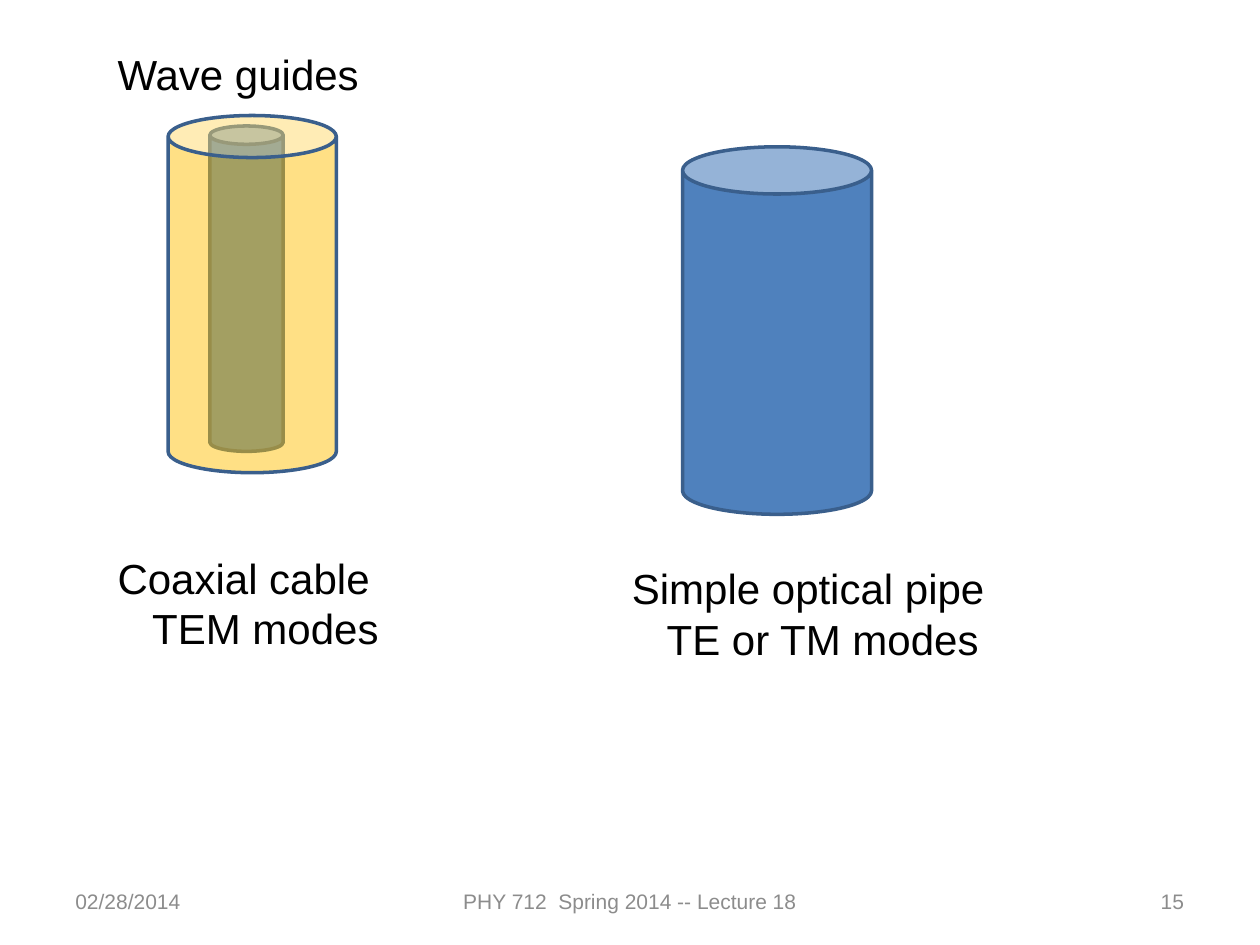
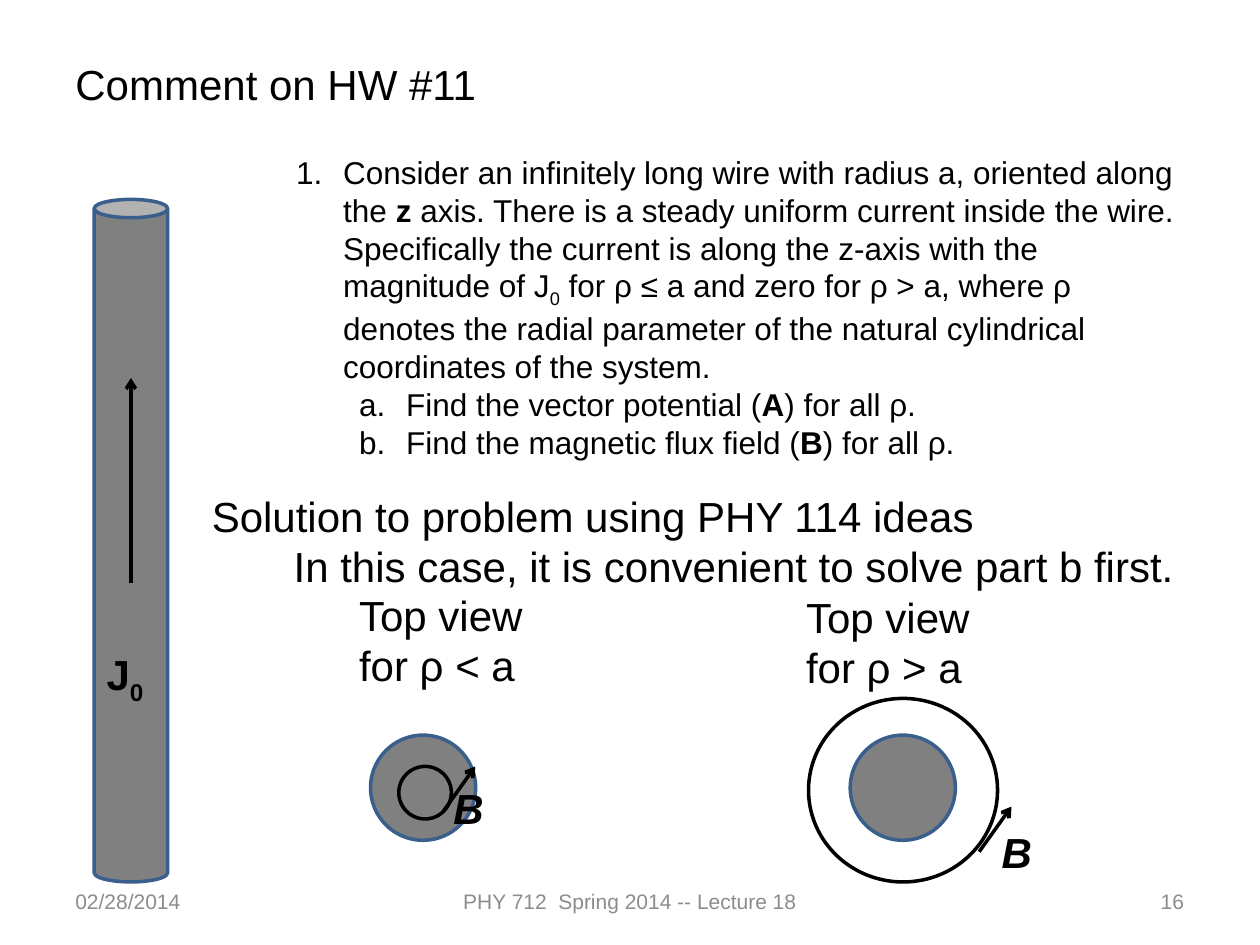
from dataclasses import dataclass

from lxml.etree import SubElement
from pptx import Presentation
from pptx.dml.color import RGBColor as Rgb
from pptx.enum.shapes import MSO_CONNECTOR as Link, MSO_SHAPE as Kind
from pptx.enum.text import MSO_ANCHOR as Anchor, MSO_AUTO_SIZE as Fit, PP_ALIGN as Align
from pptx.oxml.ns import qn
from pptx.util import Cm, Pt


@dataclass(frozen=True)
class Theme:
    font: str = "Arial"
    ink: Rgb = Rgb(0, 0, 0)
    footer: Rgb = Rgb(0x8C, 0x8C, 0x8C)
    blue: Rgb = Rgb(0x4F, 0x81, 0xBD)
    outline: Rgb = Rgb(0x3A, 0x5F, 0x8C)
    gold: Rgb = Rgb(0xFF, 0xC0, 0x00)
    wire: Rgb = Rgb(0x80, 0x80, 0x80)
    heading_size: Pt = Pt(24)
    problem_size: Pt = Pt(18)
    footer_size: Pt = Pt(12)
    stroke: Pt = Pt(2)


THEME = Theme()
BOLD = {"bold": True}
VECTOR = {"bold": True, "italic": True}
SUBSCRIPT = {"baseline": -25}


def set_values(target, values):
    for name, value in values.items():
        setattr(target, name, value)


def add_span(para, text, size, color, style):
    span = para.add_run()
    span.text = text
    font_values = {"name": THEME.font, "size": size, **style}
    baseline = font_values.pop("baseline", 0)
    set_values(span.font, font_values)
    span.font.color.rgb = color
    if baseline:
        span.font._element.set("baseline", str(baseline * 1000))


def set_indent(para, margin, hanging, numbering):
    properties = para._p.get_or_add_pPr()
    properties.set("marL", str(Cm(margin)))
    properties.set("indent", str(-Cm(hanging)))
    if numbering:
        SubElement(properties, qn("a:buAutoNum"), type=numbering)


def add_text(page, place, paragraphs, size=THEME.heading_size, color=THEME.ink,
             align=Align.LEFT, anchor=Anchor.TOP, fit=Fit.SHAPE_TO_FIT_TEXT):
    box = page.shapes.add_textbox(*map(Cm, place))
    frame = box.text_frame
    set_values(frame, {"word_wrap": True, "auto_size": fit, "vertical_anchor": anchor})
    for index, content in enumerate(paragraphs):
        para = frame.add_paragraph() if index else frame.paragraphs[0]
        set_values(para, {"alignment": align, "level": content.get("level", 0)})
        for text, style in content["spans"]:
            add_span(para, text, size, color, style)
        if "margin" in content:
            set_indent(para, content["margin"], content.get("hanging", 0),
                       content.get("numbering"))


def plain(text, **layout):
    return {"spans": [(text, {})], **layout}


def add_solid(page, kind, place, fill=None, line=THEME.outline, opacity=100):
    solid = page.shapes.add_shape(kind, *map(Cm, place))
    solid.shadow.inherit = False
    set_values(solid.line, {"width": THEME.stroke})
    solid.line.color.rgb = line
    if fill is None:
        solid.fill.background()
        return
    solid.fill.solid()
    solid.fill.fore_color.rgb = fill
    if opacity < 100:
        color = solid._element.spPr.find(qn("a:solidFill")).find(qn("a:srgbClr"))
        SubElement(color, qn("a:alpha"), val=str(opacity * 1000))


def add_arrow(page, start, end):
    arrow = page.shapes.add_connector(Link.STRAIGHT, *map(Cm, start + end))
    arrow.line.width = THEME.stroke
    arrow.line.color.rgb = THEME.ink
    SubElement(arrow.line._get_or_add_ln(), qn("a:tailEnd"), type="arrow")
    SubElement(arrow._element.spPr, qn("a:effectLst"))


def add_page(deck, number):
    page = deck.slides.add_slide(deck.slide_layouts[6])
    footers = (
        (1.27, 5.92, "02/28/2014", Align.LEFT),
        (8.68, 8.04, "PHY 712  Spring 2014 -- Lecture 18", Align.CENTER),
        (18.2, 5.92, str(number), Align.RIGHT),
    )
    for left, width, text, align in footers:
        add_text(page, (left, 17.65, width, 1.02), [plain(text)], THEME.footer_size,
                 THEME.footer, align, Anchor.MIDDLE, Fit.NONE)
    return page


def add_top_view(page, caption, caption_place, disc_left, loop_place, start, end, label_place):
    add_text(page, caption_place, [plain(caption)])
    add_solid(page, Kind.OVAL, (disc_left, 14.82, 2.12, 2.12), THEME.wire)
    add_solid(page, Kind.OVAL, loop_place, line=THEME.ink)
    add_arrow(page, start, end)
    add_text(page, label_place, [{"spans": [("B", VECTOR)]}])


def build_wave_guides(deck):
    page = add_page(deck, 15)
    add_text(page, (2.12, 0.85, 16.09, 1.27), [plain("Wave guides")])
    add_solid(page, Kind.CAN, (4.23, 2.54, 1.48, 6.56), THEME.blue)
    add_solid(page, Kind.CAN, (3.39, 2.33, 3.39, 7.2), THEME.gold, opacity=48)
    add_solid(page, Kind.CAN, (13.76, 2.96, 3.81, 7.41), THEME.blue)
    captions = (
        ((2.12, 11.01, 6.56, 2.31), "Coaxial cable", "TEM modes"),
        ((12.49, 11.22, 9.1, 2.31), "Simple optical pipe", "TE or TM modes"),
    )
    for place, guide, modes in captions:
        add_text(page, place, [plain(guide), plain(modes, margin=0.7)])


def find_part(quantity, symbol):
    return {
        "spans": [(f"Find the {quantity} (", {}), (symbol, BOLD), (") for all ρ.", {})],
        "level": 1, "margin": 2.22, "hanging": 0.95, "numbering": "alphaLcPeriod",
    }


def build_homework(deck):
    page = add_page(deck, 16)
    add_text(page, (1.27, 1.06, 22.86, 1.27), [plain("Comment on HW #11")])
    add_solid(page, Kind.CAN, (1.9, 4.02, 1.48, 13.76), THEME.wire)
    problem = {
        "spans": [
            ("Consider an infinitely long wire with radius a, oriented along the ", {}),
            ("z", BOLD),
            (" axis. There is a steady uniform current inside the wire. Specifically the "
             "current is along the z-axis with the magnitude of J", {}),
            ("0", SUBSCRIPT),
            (" for ρ ≤ a and zero for ρ > a, where ρ denotes the radial parameter of the "
             "natural cylindrical coordinates of the system.", {}),
        ],
        "margin": 0.95, "hanging": 0.95, "numbering": "arabicPeriod",
    }
    parts = [find_part("vector potential", "A"), find_part("magnetic flux field", "B")]
    add_text(page, (5.72, 2.96, 18.42, 6.4), [problem, *parts], THEME.problem_size)
    add_text(page, (4.02, 9.76, 20.75, 2.31), [
        plain("Solution to problem using PHY 114 ideas"),
        plain("In this case, it is convenient to solve part b first.", margin=1.65),
    ])
    add_top_view(page, "Top view for ρ < a", (6.99, 11.76, 4.86, 2.31), 7.47,
                 (8.04, 15.45, 1.06, 1.06), (8.94, 16.35), (9.58, 15.45),
                 (8.89, 15.65, 1.83, 1.27))
    add_top_view(page, "Top view for ρ > a", (16, 11.79, 4.86, 2.31), 17.14,
                 (16.3, 14.08, 3.81, 3.7), (19.74, 17.17), (20.39, 16.26),
                 (19.94, 16.54, 1.83, 1.27))
    add_arrow(page, (2.64, 11.76), (2.64, 7.62))
    add_text(page, (1.9, 12.95, 1.48, 1.27),
             [{"spans": [("J", BOLD), ("0", {**BOLD, **SUBSCRIPT})]}])


def main():
    deck = Presentation()
    set_values(deck, {"slide_width": Cm(25.4), "slide_height": Cm(19.05)})
    build_wave_guides(deck)
    build_homework(deck)
    deck.save("out.pptx")


if __name__ == "__main__":
    main()
